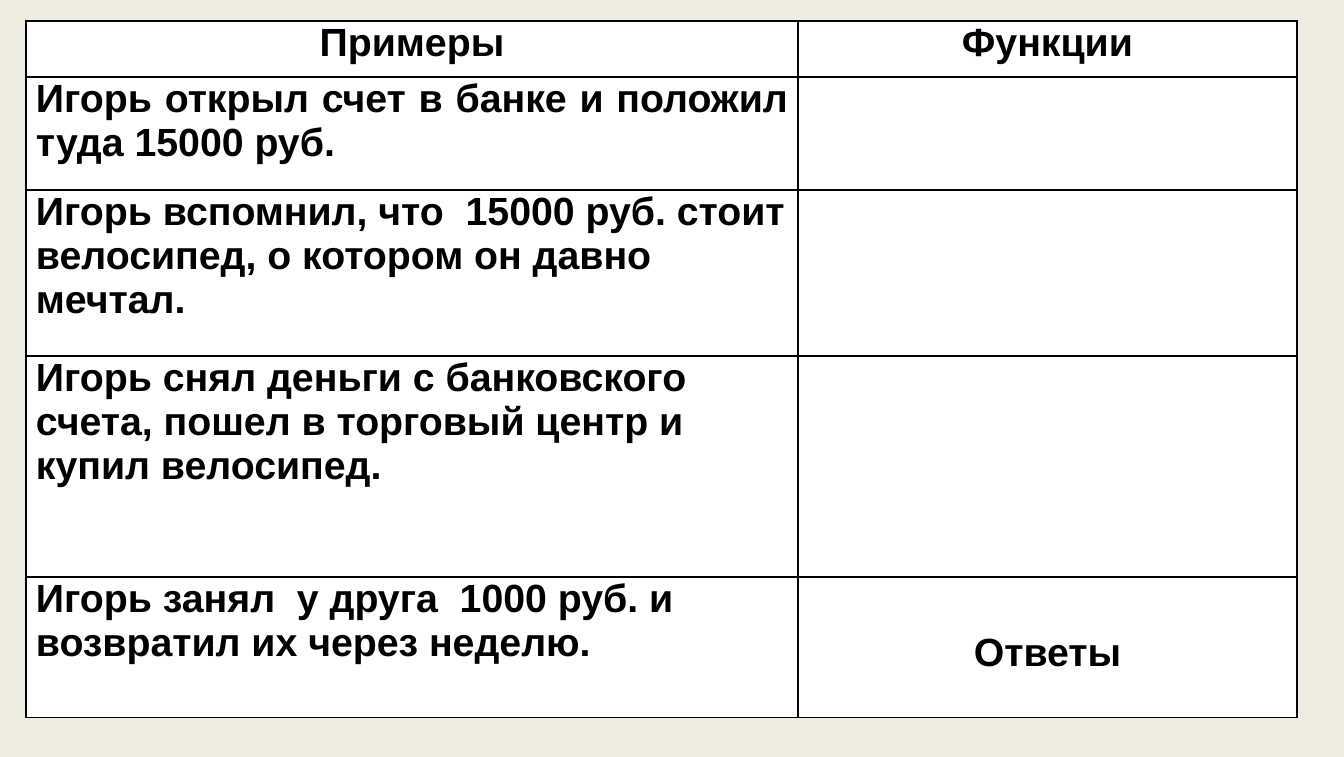
import dataclasses

import lxml.etree
import pptx
import pptx.dml.color
import pptx.enum.text
import pptx.oxml.ns
import pptx.util

EMU_PER_PX = 914400 / 101
ALIGN = pptx.enum.text.PP_ALIGN


@dataclasses.dataclass(frozen=True)
class Theme:
    background: str = "EEECE1"
    cell: str = "FFFFFF"
    ink: str = "000000"
    font: str = "Arial"
    text_size: int = 28
    space_after: int = 6
    border_width: int = 1


THEME = Theme()

COLUMN_WIDTHS = [772, 499]
ROW_HEIGHTS = [56, 113, 166, 221, 141]
SIDE_MARGIN = 10
ANSWER_DROP = 54

# Each cell: text, alignment, top margin
EMPTY = ("", ALIGN.LEFT, 0)
ROWS = [
    [("Примеры", ALIGN.CENTER, 0), ("Функции", ALIGN.CENTER, 0)],
    [("Игорь открыл счет в банке и положил туда 15000 руб.", ALIGN.JUSTIFY, 0), EMPTY],
    [("Игорь вспомнил, что  15000 руб. стоит велосипед, о котором он давно мечтал.",
      ALIGN.LEFT, 0), EMPTY],
    [("Игорь снял деньги с банковского счета, пошел в торговый центр и купил велосипед.",
      ALIGN.LEFT, 0), EMPTY],
    [("Игорь занял  у друга  1000 руб. и возвратил их через неделю.", ALIGN.LEFT, 0),
     ("Ответы", ALIGN.CENTER, ANSWER_DROP)],
]


def px(length):
    return pptx.util.Emu(round(length * EMU_PER_PX))


def rgb(value):
    return pptx.dml.color.RGBColor.from_string(value)


def paint_background(slide):
    fill = slide.background.fill
    fill.solid()
    fill.fore_color.rgb = rgb(THEME.background)


def add_borders(cell):
    """Outline all four sides; must run before the cell gets its fill."""
    qn = pptx.oxml.ns.qn
    properties = cell._tc.get_or_add_tcPr()
    for side in ("a:lnL", "a:lnR", "a:lnT", "a:lnB"):
        line = lxml.etree.SubElement(properties, qn(side))
        line.set("w", str(pptx.util.Pt(THEME.border_width)))
        fill = lxml.etree.SubElement(line, qn("a:solidFill"))
        lxml.etree.SubElement(fill, qn("a:srgbClr")).set("val", THEME.ink)


def style_cell(cell):
    add_borders(cell)
    cell.fill.solid()
    cell.fill.fore_color.rgb = rgb(THEME.cell)
    cell.margin_left = cell.margin_right = px(SIDE_MARGIN)
    cell.margin_bottom = 0


def write_cell(cell, text, alignment, top_margin):
    cell.margin_top = px(top_margin)
    if not text:
        return
    paragraph = cell.text_frame.paragraphs[0]
    paragraph.text = text
    paragraph.alignment = alignment
    paragraph.space_after = pptx.util.Pt(THEME.space_after)
    font = paragraph.runs[0].font
    font.name = THEME.font
    font.size = pptx.util.Pt(THEME.text_size)
    font.bold = True
    font.color.rgb = rgb(THEME.ink)


def add_functions_table(slide, left, top):
    table = slide.shapes.add_table(
        len(ROW_HEIGHTS), len(COLUMN_WIDTHS), px(left), px(top),
        px(sum(COLUMN_WIDTHS)), px(sum(ROW_HEIGHTS))).table
    table.first_row = table.horz_banding = False
    for column, width in zip(table.columns, COLUMN_WIDTHS):
        column.width = px(width)
    for row, height, contents in zip(table.rows, ROW_HEIGHTS, ROWS):
        row.height = px(height)
        for cell, content in zip(row.cells, contents):
            style_cell(cell)
            write_cell(cell, *content)


def main():
    presentation = pptx.Presentation()
    presentation.slide_width = px(1344)
    presentation.slide_height = px(757)
    slide = presentation.slides.add_slide(presentation.slide_layouts[6])
    paint_background(slide)
    add_functions_table(slide, left=26, top=21)
    presentation.save("out.pptx")


if __name__ == "__main__":
    main()
